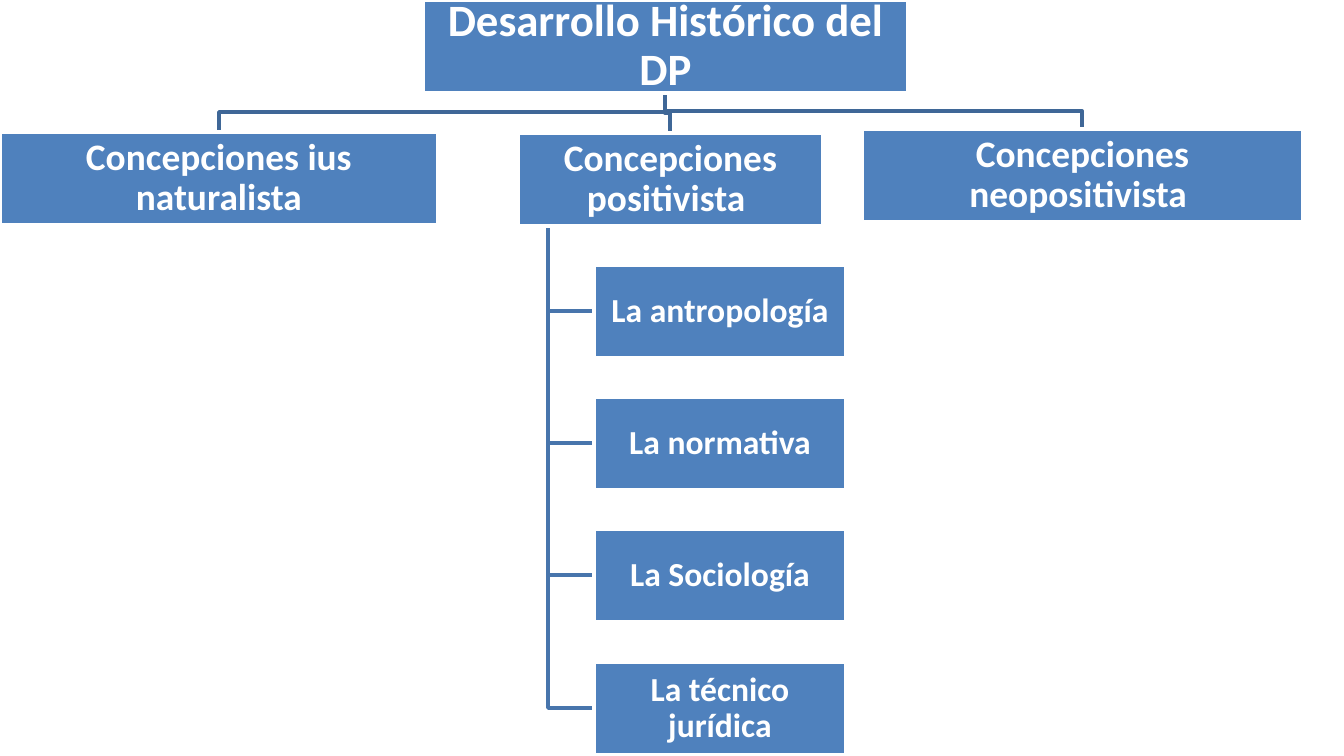
"""Build an organisation chart on the historical development of DP."""
from dataclasses import dataclass

from pptx import Presentation
from pptx import util as u
from pptx.dml.color import RGBColor
from pptx.enum import shapes, text

EMU_PER_PX = 914400 / 134.4
BOX_HEIGHT = 93
TITLE_ONLY = 5


@dataclass(frozen=True)
class Theme:
    font: str = "Calibri"
    box: str = "4F81BD"
    paper: str = "FFFFFF"
    branch_link: str = "3F6797"
    leaf_link: str = "4875AC"
    stroke: int = 2
    root_size: int = 24
    branch_size: int = 20
    leaf_size: int = 18


THEME = Theme()


@dataclass(frozen=True)
class Node:
    label: str
    left: int
    top: int
    width: int
    size: int

    @property
    def centre(self):
        return self.left + self.width // 2

    @property
    def middle(self):
        return self.top + BOX_HEIGHT // 2

    @property
    def bottom(self):
        return self.top + BOX_HEIGHT


def px(length):
    return u.Emu(round(length * EMU_PER_PX))


def set_outline(figure, colour):
    figure.shadow.inherit = False
    figure.line.color.rgb = RGBColor.from_string(colour)
    figure.line.width = u.Pt(THEME.stroke)


def style_box(box, node):
    box.left, box.top = px(node.left), px(node.top)
    box.width, box.height = px(node.width), px(BOX_HEIGHT)
    box.fill.solid()
    box.fill.fore_color.rgb = RGBColor.from_string(THEME.box)
    set_outline(box, THEME.paper)

    frame = box.text_frame
    frame.text = node.label
    frame.word_wrap = True
    frame.auto_size = text.MSO_AUTO_SIZE.NONE
    frame.vertical_anchor = text.MSO_ANCHOR.MIDDLE
    frame.margin_left = frame.margin_right = px(2)
    frame.margin_top = frame.margin_bottom = px(2)
    label = frame.paragraphs[0]
    label.alignment = text.PP_ALIGN.CENTER
    label.line_spacing = 0.9
    label.font.name = THEME.font
    label.font.size = u.Pt(node.size)
    label.font.bold = True
    label.font.color.rgb = RGBColor.from_string(THEME.paper)


def add_title(slide, node):
    title = slide.shapes.title
    slide.shapes.element.append(title.element)
    style_box(title, node)


def add_box(slide, node):
    box = slide.shapes.add_shape(shapes.MSO_SHAPE.RECTANGLE, 0, 0, 0, 0)
    style_box(box, node)


def add_link(slide, points, colour):
    builder = slide.shapes.build_freeform(*points[0], scale=EMU_PER_PX)
    builder.add_line_segments(points[1:], close=False)
    link = builder.convert_to_shape()
    link.fill.background()
    set_outline(link, colour)


def link_branch(slide, root, branch):
    elbow = (root.bottom + branch.top) // 2
    points = [(root.centre, root.bottom), (root.centre, elbow),
              (branch.centre, elbow), (branch.centre, branch.top)]
    add_link(slide, points, THEME.branch_link)


def link_leaf(slide, parent, leaf):
    trunk = parent.left + parent.width // 10
    points = [(trunk, parent.bottom), (trunk, leaf.middle),
              (leaf.left, leaf.middle)]
    add_link(slide, points, THEME.leaf_link)


def main():
    deck = Presentation()
    deck.slide_width, deck.slide_height = px(1344), px(756)
    slide = deck.slides.add_slide(deck.slide_layouts[TITLE_ONLY])

    root = Node("Desarrollo Histórico del DP", 423, 0, 485, THEME.root_size)
    naturalist = Node("Concepciones ius naturalista", 0, 132, 438, THEME.branch_size)
    positivist = Node("Concepciones positivista ", 518, 133, 305, THEME.branch_size)
    neopositivist = Node("Concepciones neopositivista ", 862, 129, 441, THEME.branch_size)
    branches = [naturalist, positivist, neopositivist]
    schools = ["La antropología", "La normativa", "La Sociología", "La técnico jurídica"]
    leaves = [Node(school, 594, 265 + row * 397 // 3, 252, THEME.leaf_size)
              for row, school in enumerate(schools)]

    for leaf in leaves:
        link_leaf(slide, positivist, leaf)
    for branch in branches:
        link_branch(slide, root, branch)
    add_title(slide, root)
    for node in branches + leaves:
        add_box(slide, node)

    deck.save("out.pptx")


if __name__ == "__main__":
    main()
